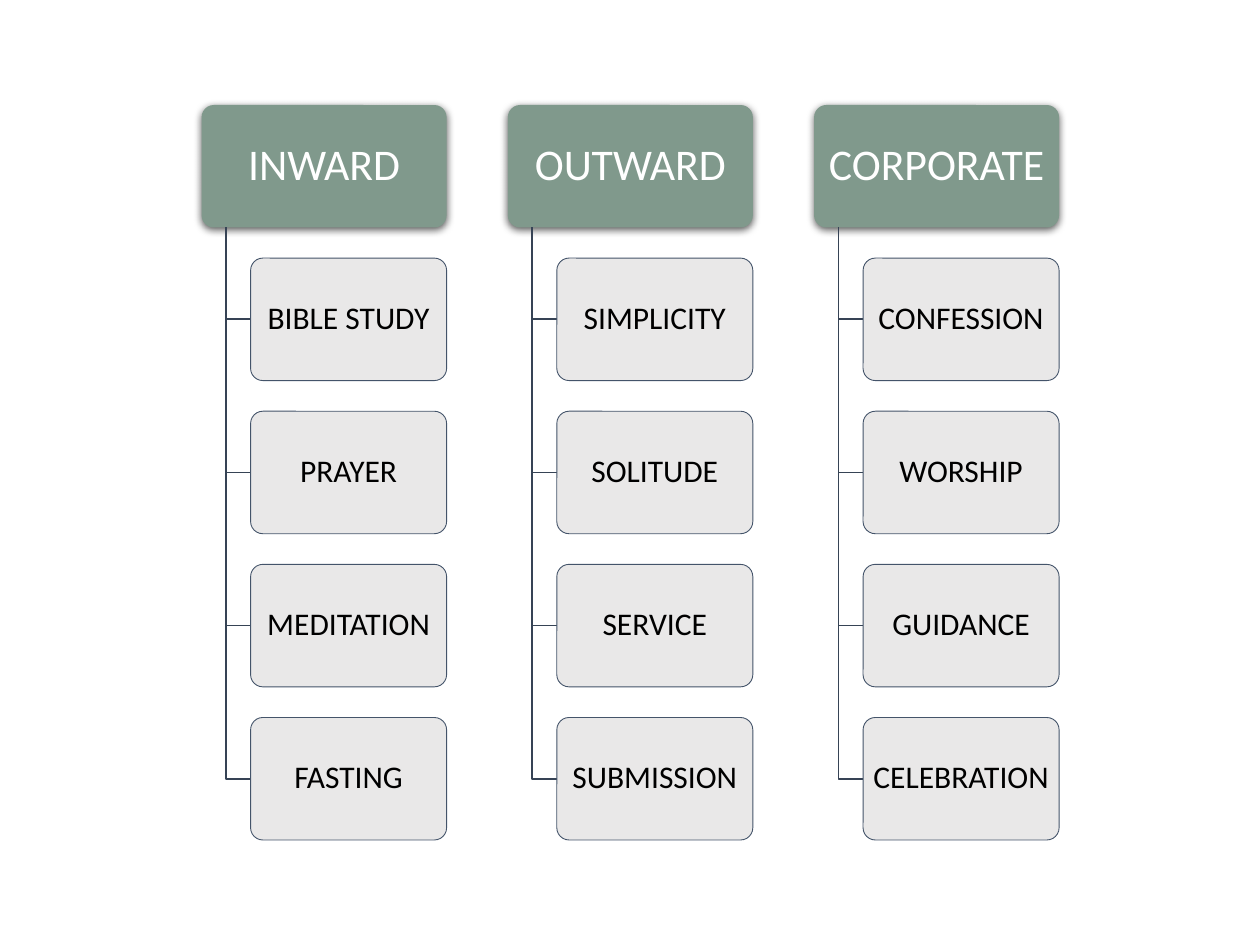
from dataclasses import dataclass

from pptx import Presentation
from pptx.dml.color import RGBColor
from pptx.enum import shapes, text
from pptx.oxml import ns, parse_xml
from pptx.util import Pt


@dataclass(frozen=True)
class Theme:
    font: str = "Calibri"
    head: str = "80998C"
    card: str = "E7E6E6"
    edge: str = "44546A"
    stem: str = "364355"
    light: str = "FFFFFF"
    dark: str = "000000"
    big: int = 25
    small: int = 18


THEME = Theme()
LEFT, TOP = 115.2, 60
WIDE, HIGH = 140, 70
STEP_X, STEP_Y = 175, 87.5
STEM, INDENT = 14, 28

GROUPS = {
    "INWARD": ["BIBLE STUDY", "PRAYER", "MEDITATION", "FASTING"],
    "OUTWARD": ["SIMPLICITY", "SOLITUDE", "SERVICE", "SUBMISSION"],
    "CORPORATE": ["CONFESSION", "WORSHIP", "GUIDANCE", "CELEBRATION"],
}


def color(code):
    return RGBColor.from_string(code)


def add_box(slide, x, y, wide, fill, label, size, ink, pad):
    box = slide.shapes.add_shape(
        shapes.MSO_SHAPE.ROUNDED_RECTANGLE, Pt(x), Pt(y), Pt(wide), Pt(HIGH))
    box.adjustments[0] = 0.1
    box.shadow.inherit = False
    box.fill.solid()
    box.fill.fore_color.rgb = color(fill)
    box.line.fill.background()
    frame = box.text_frame
    frame.word_wrap = True
    frame.vertical_anchor = text.MSO_ANCHOR.MIDDLE
    frame.margin_left = frame.margin_right = Pt(pad)
    frame.margin_top = frame.margin_bottom = Pt(2.2)
    para = frame.paragraphs[0]
    para.alignment = text.PP_ALIGN.CENTER
    para.line_spacing = 0.9
    run = para.add_run()
    run.text = label
    run.font.name = THEME.font
    run.font.size = Pt(size)
    run.font.color.rgb = color(ink)
    return box


def add_head(slide, x, label):
    box = add_box(slide, x, TOP, WIDE, THEME.head, label,
                  THEME.big, THEME.light, 3.6)
    shade = parse_xml(
        f'<a:outerShdw {ns.nsdecls("a")} blurRad="{Pt(4.5)}" dist="{Pt(1.5)}"'
        ' dir="5400000" algn="ctr" rotWithShape="0">'
        f'<a:srgbClr val="{THEME.dark}"><a:alpha val="63000"/></a:srgbClr>'
        '</a:outerShdw>')
    box._element.spPr.find(ns.qn("a:effectLst")).append(shade)


def add_card(slide, x, y, label):
    box = add_box(slide, x, y, WIDE - INDENT, THEME.card, label,
                  THEME.small, THEME.dark, 2.9)
    box.line.color.rgb = color(THEME.edge)
    box.line.width = Pt(0.5)
    tint = box._element.spPr.find(ns.qn("a:solidFill"))[0]
    tint.append(parse_xml(f'<a:alpha {ns.nsdecls("a")} val="90000"/>'))


def add_elbow(slide, x, y):
    """Join the foot of a head to the left side of a card centred at y."""
    pen = slide.shapes.build_freeform(Pt(x + STEM), Pt(TOP + HIGH))
    pen.add_line_segments(
        [(Pt(x + STEM), Pt(y)), (Pt(x + INDENT), Pt(y))], close=False)
    elbow = pen.convert_to_shape()
    elbow.shadow.inherit = False
    elbow.fill.background()
    elbow.line.color.rgb = color(THEME.stem)
    elbow.line.width = Pt(1)


def main():
    deck = Presentation()
    deck.slide_width, deck.slide_height = Pt(720), Pt(540)
    slide = deck.slides.add_slide(deck.slide_layouts[6])
    for col, (head, cards) in enumerate(GROUPS.items()):
        x = LEFT + col * STEP_X
        add_head(slide, x, head)
        for row, label in enumerate(cards, 1):
            y = TOP + row * STEP_Y
            add_elbow(slide, x, y + HIGH / 2)
            add_card(slide, x + INDENT, y, label)
    deck.save("out.pptx")


if __name__ == "__main__":
    main()
